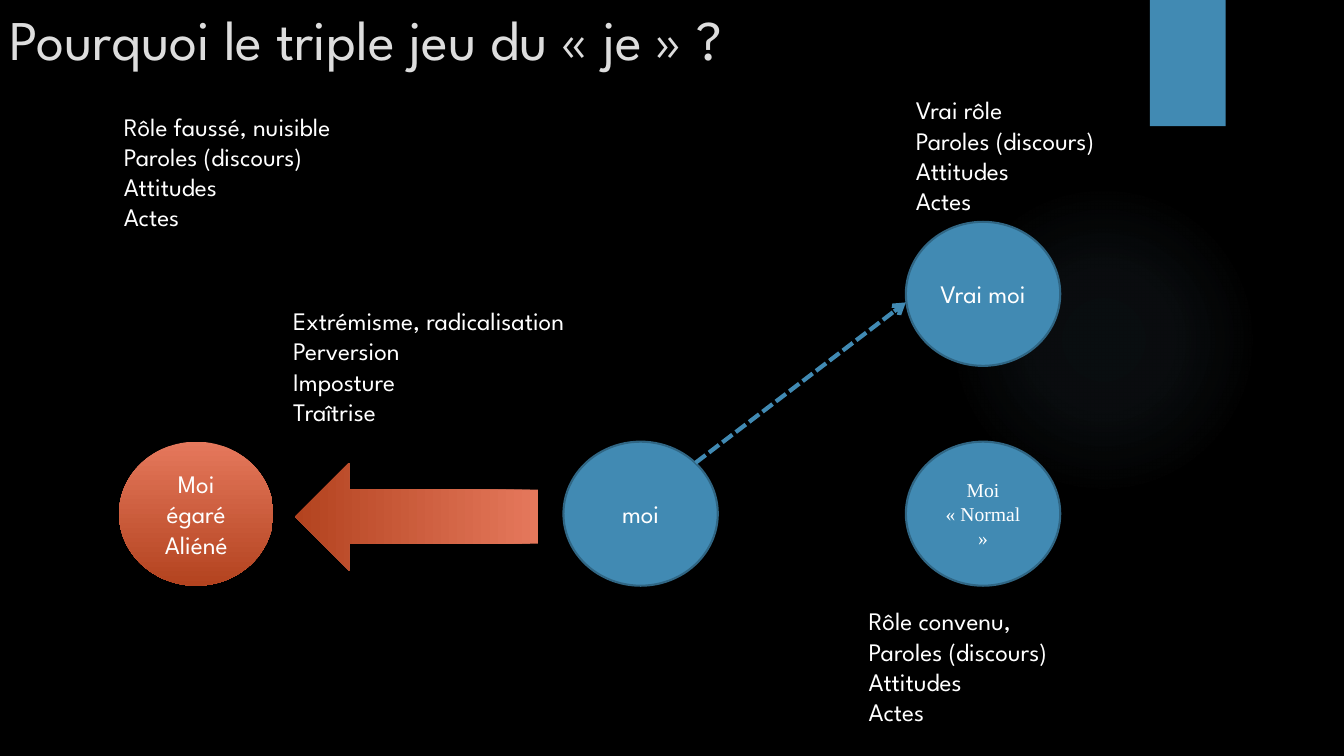
from dataclasses import dataclass

from lxml.etree import SubElement
from pptx import Presentation
from pptx.dml.color import RGBColor
from pptx.enum.dml import MSO_LINE
from pptx.enum.shapes import MSO_CONNECTOR, MSO_SHAPE
from pptx.enum.text import MSO_ANCHOR, MSO_AUTO_SIZE, PP_ALIGN
from pptx.oxml import parse_xml
from pptx.oxml.ns import nsdecls, qn
from pptx.shapes.autoshape import Shape
from pptx.slide import Slide
from pptx.text.text import TextFrame
from pptx.util import Cm, Pt

BLACK = RGBColor(0x00, 0x00, 0x00)
WHITE = RGBColor(0xFF, 0xFF, 0xFF)
LIGHT_GREY = RGBColor(0xDD, 0xDD, 0xDD)
BLUE = RGBColor(0x41, 0x8A, 0xB3)
DARK_BLUE = RGBColor(0x30, 0x66, 0x84)
PALE_BLUE = RGBColor(0x8A, 0xBA, 0xD4)
LIGHT_RED = RGBColor(0xE5, 0x78, 0x5C)
DARK_RED = RGBColor(0xB3, 0x43, 0x1F)

MAIN_FONT = "League Spartan"
CIRCLE_WIDTH = 3.89
CIRCLE_HEIGHT = 3.63
NOTE_HEIGHT = 3.33
LOWER_ROW = 11.13
RIGHT_COLUMN = 22.83


@dataclass(frozen=True)
class Circle:
    text: str
    left: float
    top: float = LOWER_ROW
    font_name: str = MAIN_FONT
    font_size: float = 18
    strayed: bool = False


@dataclass(frozen=True)
class Note:
    lines: tuple[str, ...]
    left: float
    top: float
    width: float
    wrap: bool = False


SPEECH_AND_DEEDS = ("Paroles (discours)", "Attitudes", "Actes")

CIRCLES = (
    Circle("moi", 14.2),
    Circle("Vrai moi", RIGHT_COLUMN, top=5.59),
    Circle("Moi égaré\nAliéné", 3.0, strayed=True),
    Circle("Moi\n« Normal »", RIGHT_COLUMN, font_name="Times New Roman", font_size=14),
)

NOTES = (
    Note(("Vrai rôle", *SPEECH_AND_DEEDS), RIGHT_COLUMN, 2.26, 5.87),
    Note(("Rôle faussé, nuisible", *SPEECH_AND_DEEDS), 2.87, 2.67, 6.81),
    Note(("Rôle convenu,", *SPEECH_AND_DEEDS), 21.64, 15.14, 8.03, wrap=True),
    Note(("Extrémisme, radicalisation", "Perversion", "Imposture", "Traîtrise"), 7.14, 7.57, 8.51),
)


def write_text(
    text_frame: TextFrame,
    text: str,
    size: float,
    color: RGBColor = WHITE,
    font_name: str = MAIN_FONT,
    alignment: PP_ALIGN = PP_ALIGN.LEFT,
) -> None:
    text_frame.text = text
    for paragraph in text_frame.paragraphs:
        paragraph.alignment = alignment
        for run in paragraph.runs:
            run.font.size = Pt(size)
            run.font.name = font_name
            run.font.color.rgb = color


def add_plain_shape(
    slide: Slide, kind: MSO_SHAPE, left: float, top: float, width: float, height: float
) -> Shape:
    shape = slide.shapes.add_shape(kind, Cm(left), Cm(top), Cm(width), Cm(height))
    shape.shadow.inherit = False
    shape.line.fill.background()
    return shape


def fill_solid(shape: Shape, color: RGBColor) -> None:
    shape.fill.solid()
    shape.fill.fore_color.rgb = color


def fill_red_gradient(shape: Shape) -> None:
    shape.fill.gradient()
    shape.fill.gradient_angle = 270
    for stop, position, color in zip(shape.fill.gradient_stops, (0, 1), (LIGHT_RED, DARK_RED)):
        stop.position = position
        stop.color.rgb = color


def add_glow(slide: Slide) -> None:
    glow = add_plain_shape(slide, MSO_SHAPE.OVAL, 23.9, 4.65, 7.82, 7.82)
    stops = "".join(
        f'<a:gs pos="{position * 1000}"><a:srgbClr val="{PALE_BLUE}">'
        f'<a:alpha val="{opacity * 1000}"/></a:srgbClr></a:gs>'
        for position, opacity in ((0, 7), (36, 6), (69, 0))
    )
    gradient = parse_xml(
        f'<a:gradFill {nsdecls("a")} rotWithShape="1"><a:gsLst>{stops}</a:gsLst>'
        '<a:path path="circle"><a:fillToRect l="50000" t="50000" r="50000" b="50000"/>'
        "</a:path></a:gradFill>"
    )
    glow._element.spPr.find(qn("a:prstGeom")).addnext(gradient)


def add_circle(slide: Slide, circle: Circle) -> None:
    shape = add_plain_shape(
        slide, MSO_SHAPE.OVAL, circle.left, circle.top, CIRCLE_WIDTH, CIRCLE_HEIGHT
    )
    if circle.strayed:
        fill_red_gradient(shape)
    else:
        fill_solid(shape, BLUE)
        shape.line.color.rgb = DARK_BLUE
        shape.line.width = Pt(1.5)
    shape.text_frame.word_wrap = True
    shape.text_frame.vertical_anchor = MSO_ANCHOR.MIDDLE
    write_text(
        shape.text_frame,
        circle.text,
        circle.font_size,
        font_name=circle.font_name,
        alignment=PP_ALIGN.CENTER,
    )


def add_note(slide: Slide, note: Note) -> None:
    box = slide.shapes.add_textbox(Cm(note.left), Cm(note.top), Cm(note.width), Cm(NOTE_HEIGHT))
    box.text_frame.word_wrap = note.wrap
    box.text_frame.auto_size = MSO_AUTO_SIZE.SHAPE_TO_FIT_TEXT
    write_text(box.text_frame, "\n".join(note.lines), 18)


def add_dashed_arrow(slide: Slide) -> None:
    connector = slide.shapes.add_connector(
        MSO_CONNECTOR.STRAIGHT, Cm(17.53), Cm(11.66), Cm(RIGHT_COLUMN), Cm(7.62)
    )
    connector.line.color.rgb = BLUE
    connector.line.width = Pt(3)
    connector.line.dash_style = MSO_LINE.SQUARE_DOT
    SubElement(connector.line._get_or_add_ln(), qn("a:tailEnd"), type="arrow")
    SubElement(connector._element.spPr, qn("a:effectLst"))


def main() -> None:
    presentation = Presentation()
    presentation.slide_width = Cm(33.87)
    presentation.slide_height = Cm(19.05)
    slide = presentation.slides.add_slide(presentation.slide_layouts[6])
    slide.background.fill.solid()
    slide.background.fill.fore_color.rgb = BLACK

    add_glow(slide)
    fill_solid(add_plain_shape(slide, MSO_SHAPE.RECTANGLE, 28.98, 0, 1.91, 3.18), BLUE)

    title = slide.shapes.add_textbox(Cm(0), Cm(0), Cm(28.58), Cm(5.51))
    title.text_frame.word_wrap = True
    write_text(title.text_frame, "Pourquoi le triple jeu du « je » ?", 40, LIGHT_GREY)

    for circle in CIRCLES:
        add_circle(slide, circle)
    add_dashed_arrow(slide)

    red_arrow = add_plain_shape(slide, MSO_SHAPE.DOWN_ARROW, 9.14, 9.96, 2.72, 6.12)
    red_arrow.rotation = 90
    fill_red_gradient(red_arrow)

    for note in NOTES:
        add_note(slide, note)

    presentation.save("out.pptx")


if __name__ == "__main__":
    main()
